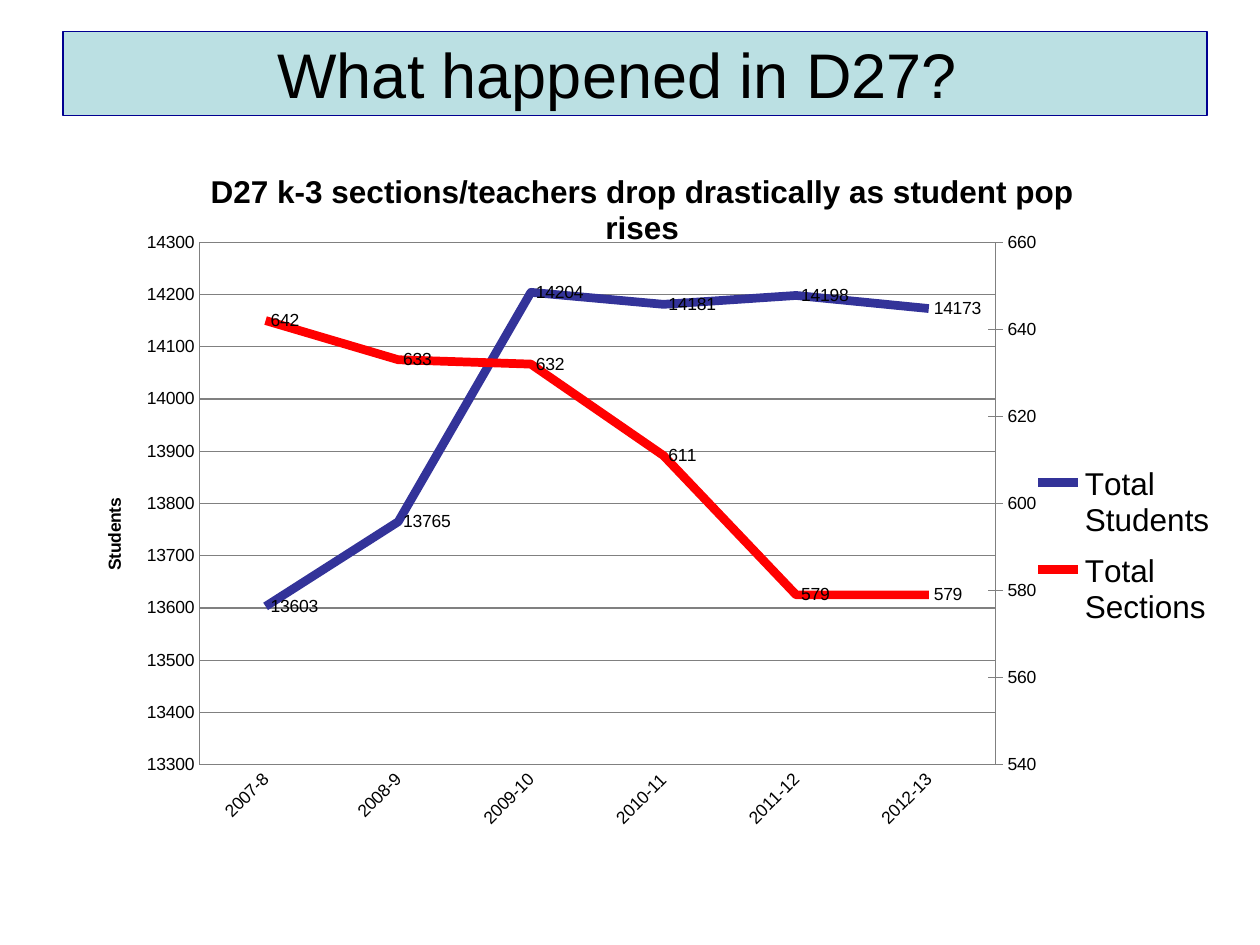
"""Build the D27 slide: a title banner over a two-axis line chart of students and sections."""
from copy import deepcopy

from lxml import etree
from pptx import Presentation
from pptx.chart.data import CategoryChartData
from pptx.dml.color import RGBColor
from pptx.enum.chart import XL_CHART_TYPE, XL_LABEL_POSITION, XL_LEGEND_POSITION, XL_MARKER_STYLE, XL_TICK_MARK
from pptx.enum.shapes import MSO_SHAPE
from pptx.enum.text import MSO_ANCHOR, PP_ALIGN
from pptx.oxml.ns import qn
from pptx.util import Inches, Pt

THEME = {
    "font": "Arial",
    "text": RGBColor.from_string("000000"),
    "banner": RGBColor.from_string("BBE0E3"),
    "border": RGBColor.from_string("000090"),
    "grid": RGBColor.from_string("808080"),
    "students": RGBColor.from_string("333399"),
    "sections": RGBColor.from_string("FF0000"),
    "banner_size": Pt(36),
    "heading_size": Pt(18),
    "label_size": Pt(10),
}


def style_font(font, size, bold=False):
    """Apply the theme font at one size."""
    formats = {"name": THEME["font"], "size": THEME[size], "bold": bold}
    for name, value in formats.items():
        setattr(font, name, value)
    font.color.rgb = THEME["text"]


def place(parent, index, **values):
    """Give a chart part a manual layout."""
    for old in parent.findall(qn("c:layout")):
        parent.remove(old)
    layout = etree.Element(qn("c:layout"))
    manual = etree.SubElement(layout, qn("c:manualLayout"))
    for name, value in values.items():
        etree.SubElement(manual, qn(f"c:{name}")).set("val", str(value))
    parent.insert(index, layout)


prs = Presentation()
prs.slide_width, prs.slide_height = Inches(10), Inches(7.5)
s = prs.slides.add_slide(prs.slide_layouts[6])

sp = s.shapes.add_shape(MSO_SHAPE.RECTANGLE, Inches(0.5), Inches(0.25), Inches(9.08), Inches(0.67))
sp.shadow.inherit = False
sp.fill.solid()
sp.fill.fore_color.rgb = THEME["banner"]
sp.line.color.rgb = THEME["border"]
sp.line.width = Pt(0.75)
tf = sp.text_frame
banner_format = {"word_wrap": True, "vertical_anchor": MSO_ANCHOR.MIDDLE, "margin_right": Inches(0.38)}
for name, value in banner_format.items():
    setattr(tf, name, value)
p = tf.paragraphs[0]
p.alignment = PP_ALIGN.CENTER
r = p.add_run()
r.text = "What happened in D27?"
style_font(r.font, "banner_size")

data = CategoryChartData()
data.categories = ["2007-8", "2008-9", "2009-10", "2010-11", "2011-12", "2012-13"]
data.add_series("Total Students", [13603, 13765, 14204, 14181, 14198, 14173])
data.add_series("Total Sections", [642, 633, 632, 611, 579, 579])
chart = s.shapes.add_chart(
    XL_CHART_TYPE.LINE, Inches(0.42), Inches(1.08), Inches(9.29), Inches(5.81), data
).chart
style_font(chart.font, "label_size")

chart.has_title = True
cat_axis, val_axis = chart.category_axis, chart.value_axis
titles = [
    (chart.chart_title, "D27 k-3 sections/teachers drop drastically as student pop rises", "heading_size", 0.13, 0.04),
    (val_axis.axis_title, "Students", "label_size", 0.04, 0.49),
]
for title, text, size, x, y in titles:
    p = title.text_frame.paragraphs[0]
    r = p.add_run()
    r.text = text
    style_font(r.font, size, bold=True)
    place(title._element, 1, xMode="edge", yMode="edge", x=x, y=y)
val_axis.axis_title._element.find(".//" + qn("a:bodyPr")).set("rot", "-5400000")

chart.has_legend = True
legend = chart.legend
legend.position = XL_LEGEND_POSITION.RIGHT
legend.include_in_layout = False
style_font(legend.font, "heading_size")
place(legend._element, 1, xMode="edge", yMode="edge", x=0.83, y=0.43, w=0.17, h=0.26)

axis_format = {"minimum_scale": 13300, "maximum_scale": 14300, "major_unit": 100, "has_major_gridlines": True}
for name, value in axis_format.items():
    setattr(val_axis, name, value)
for axis in (cat_axis, val_axis):
    axis.major_tick_mark = axis.minor_tick_mark = XL_TICK_MARK.NONE
    axis.format.line.color.rgb = THEME["grid"]
    style_font(axis.tick_labels.font, "label_size")
val_axis.major_gridlines.format.line.color.rgb = THEME["grid"]
cat_axis._element.find(qn("c:txPr")).find(qn("a:bodyPr")).set("rot", "-2700000")

label_shifts = [(-0.01, -0.03), (-0.02, 0.02)]
for series, color, (x, y) in zip(chart.plots[0].series, ("students", "sections"), label_shifts):
    series.smooth = False
    series.marker.style = XL_MARKER_STYLE.NONE
    series.format.line.color.rgb = THEME[color]
    series.format.line.width = Pt(5)
    labels = series.data_labels
    labels.show_value = True
    labels.position = XL_LABEL_POSITION.RIGHT
    style_font(labels.font, "label_size")
    last = series.points[5].data_label
    last.position = XL_LABEL_POSITION.RIGHT
    place(last._element if hasattr(last, "_element") else labels._element.find(qn("c:dLbl")), 1, x=x, y=y)

plot_area = chart._chartSpace.find(".//" + qn("c:plotArea"))
left_lines = plot_area.find(qn("c:lineChart"))
vary = left_lines.find(qn("c:varyColors"))
vary.set("val", "0")
right_lines = deepcopy(left_lines)
left_lines.remove(left_lines.findall(qn("c:ser"))[1])
right_lines.remove(right_lines.findall(qn("c:ser"))[0])
left_lines.addnext(right_lines)
for ref, axis_id in zip(right_lines.findall(qn("c:axId")), ("5001", "5002")):
    ref.set("val", axis_id)

right_val, right_cat = deepcopy(val_axis._element), deepcopy(cat_axis._element)
for tag in ("c:majorGridlines", "c:title"):
    right_val.remove(right_val.find(qn(tag)))
right_values = {
    "axId": "5002", "crossAx": "5001", "axPos": "r", "crosses": "max", "majorTickMark": "cross",
    "scaling/c:max": "660", "scaling/c:min": "540", "majorUnit": "20",
}
for axis, values in ((right_val, right_values), (right_cat, {"axId": "5001", "crossAx": "5002", "delete": "1"})):
    for tag, value in values.items():
        axis.find("/".join(qn(part if ":" in part else f"c:{part}") for part in tag.split("/"))).set("val", value)
val_axis._element.addnext(right_val)
right_val.addnext(right_cat)
place(plot_area, 0, layoutTarget="inner", xMode="edge", yMode="edge", x=0.125, y=0.145, w=0.68, h=0.714)

prs.save("out.pptx")
